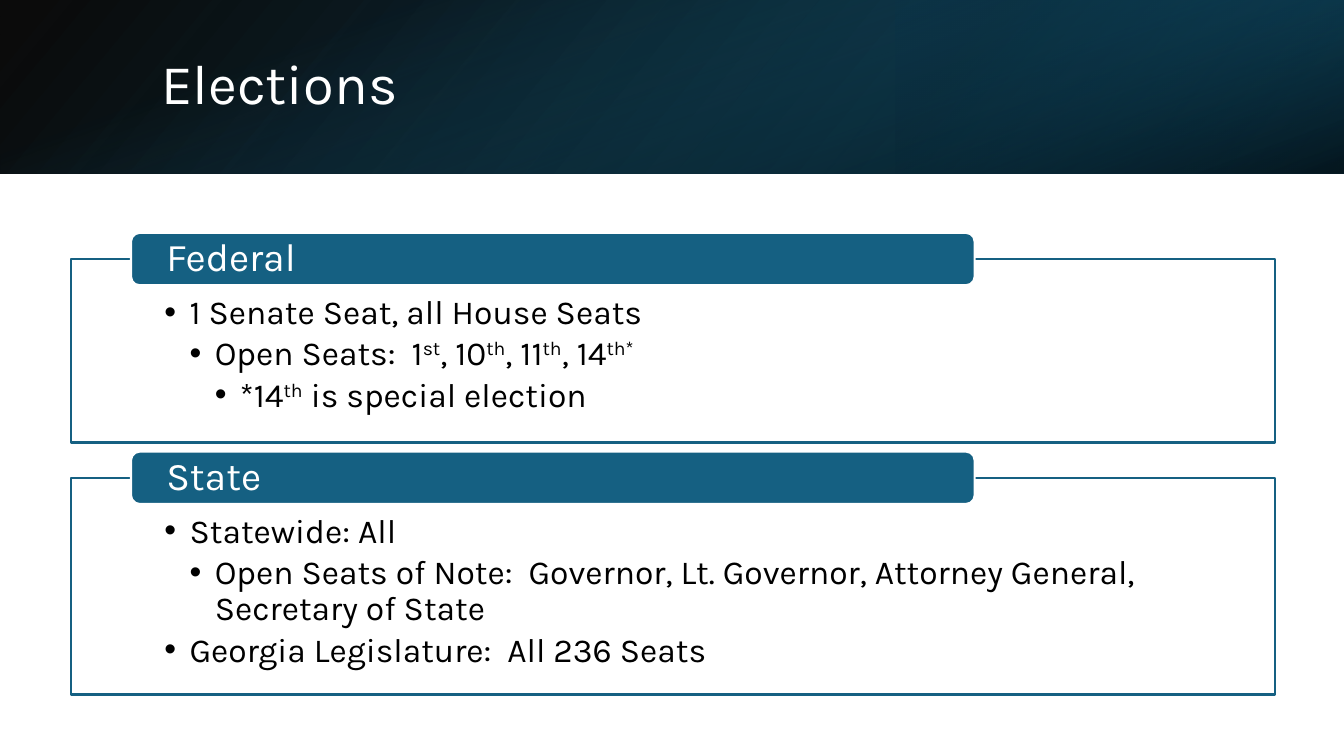
from dataclasses import dataclass

import pptx
import pptx.dml.color
import pptx.enum.shapes
import pptx.enum.text
import pptx.oxml
import pptx.oxml.ns
import pptx.util
from lxml import etree

Pt = pptx.util.Pt
MIDDLE = pptx.enum.text.MSO_ANCHOR.MIDDLE
TOP = pptx.enum.text.MSO_ANCHOR.TOP
SHAPES = pptx.enum.shapes.MSO_SHAPE

FONT = "Karla"
TEAL, WHITE, BLACK = "156082", "FFFFFF", "000000"
SLIDE_W, SLIDE_H, BAND_H = 960, 540, 123.84
BOX_X, BOX_W = 50.4, 860.4
TAB_X, TAB_W, TAB_H = 93.6, 602.64, 37.44
INDENT = 18


@dataclass
class Band:
    x: float
    y: float
    w: float
    h: float
    stops: list[tuple[int, str, int]]  # position, colour, opacity in percent
    angle: int
    rotation: int = 0
    flip: bool = False


@dataclass
class Section:
    name: str
    y: float
    h: float
    items: list[tuple[int, str]]  # level and text, with ^superscript^


BANDS = [
    Band(0, 0, SLIDE_W, BAND_H, [(0, BLACK, 96), (100, "104862", 100)], 140, flip=True),
    Band(640, 0, 320, BAND_H, [(19, "0B3041", 68), (100, TEAL, 79)], 320, 180, True),
    Band((SLIDE_W - BAND_H) / 2, (BAND_H - SLIDE_W) / 2, BAND_H, SLIDE_W,
         [(23, TEAL, 0), (99, BLACK, 74)], 340, 90),
]
SECTIONS = [
    Section("Federal", 185.04, 131.04, [
        (0, "1 Senate Seat, all House Seats"),
        (1, "Open Seats:  1^st^, 10^th^, 11^th^, 14^th*^"),
        (2, "*14^th^ is special election"),
    ]),
    Section("State", 341.28, 154.8, [
        (0, "Statewide: All"),
        (1, "Open Seats of Note:  Governor, Lt. Governor, Attorney General, "
            "Secretary of State"),
        (0, "Georgia Legislature:  All 236 Seats"),
    ]),
]


def rgb(color: str) -> pptx.dml.color.RGBColor:
    return pptx.dml.color.RGBColor.from_string(color)


def place(sp, x: float, y: float, w: float, h: float) -> None:
    sp.left, sp.top, sp.width, sp.height = Pt(x), Pt(y), Pt(w), Pt(h)


def set_style(sp, fill: str, line: str) -> None:
    sp.fill.solid()
    sp.fill.fore_color.rgb = rgb(fill)
    sp.line.color.rgb = rgb(line)
    sp.line.width = Pt(1.5)


def set_frame(tf, anchor, left: float, top: float, right: float, bottom: float) -> None:
    tf.word_wrap = True
    tf.auto_size = pptx.enum.text.MSO_AUTO_SIZE.NONE
    tf.vertical_anchor = anchor
    tf.margin_left, tf.margin_top = Pt(left), Pt(top)
    tf.margin_right, tf.margin_bottom = Pt(right), Pt(bottom)


def write(p, text: str, *, size: float, color: str, after: float = 0,
          level: int | None = None) -> None:
    """Fill a paragraph; a level makes it a bullet, ^...^ is superscript."""
    p.alignment = pptx.enum.text.PP_ALIGN.LEFT
    p.line_spacing = 0.9
    p.space_before, p.space_after = Pt(0), Pt(after)
    if level is not None:
        p.level = level
        pPr = p._p.get_or_add_pPr()
        pPr.set("marL", str(Pt(INDENT * (level + 1))))
        pPr.set("indent", str(Pt(-INDENT)))
        etree.SubElement(pPr, pptx.oxml.ns.qn("a:buChar")).set("char", "•")
    for i, part in enumerate(text.split("^")):
        if not part:
            continue
        r = p.add_run()
        r.text = part
        r.font.name, r.font.size = FONT, Pt(size)
        r.font.color.rgb = rgb(color)
        if i % 2:
            r._r.get_or_add_rPr().set("baseline", "30000")


def add_band(s, band: Band):
    sp = s.shapes.add_shape(SHAPES.RECTANGLE, 0, 0, 0, 0)
    place(sp, band.x, band.y, band.w, band.h)
    sp.rotation = band.rotation
    sp.shadow.inherit = False
    sp.line.fill.background()
    spPr = sp._element.spPr
    if band.flip:
        spPr.xfrm.set("flipH", "1")
    stops = "".join(
        f'<a:gs pos="{pos * 1000}"><a:srgbClr val="{color}">'
        f'<a:alpha val="{alpha * 1000}"/></a:srgbClr></a:gs>'
        for pos, color, alpha in band.stops)
    spPr.insert(2, pptx.oxml.parse_xml(
        f'<a:gradFill {pptx.oxml.ns.nsdecls("a")} rotWithShape="1">'
        f'<a:gsLst>{stops}</a:gsLst>'
        f'<a:lin ang="{band.angle * 60000}" scaled="0"/></a:gradFill>'))
    return sp


def add_section(s, body, section: Section) -> None:
    place(body, BOX_X, section.y, BOX_W, section.h)
    set_style(body, WHITE, TEAL)
    tf = body.text_frame
    set_frame(tf, TOP, 67, 26, 67, 13.5)
    for i, (level, text) in enumerate(section.items):
        p = tf.add_paragraph() if i else tf.paragraphs[0]
        write(p, text, size=24, color=BLACK, after=3.6, level=level)

    tab = s.shapes.add_shape(SHAPES.ROUNDED_RECTANGLE, 0, 0, 0, 0)
    place(tab, TAB_X, section.y - TAB_H / 2, TAB_W, TAB_H)
    tab.shadow.inherit = False
    set_style(tab, TEAL, WHITE)
    set_frame(tab.text_frame, MIDDLE, 23.4, 0, 23.4, 0)
    write(tab.text_frame.paragraphs[0], section.name, size=28, color=WHITE)


def main() -> None:
    prs = pptx.Presentation()
    prs.slide_width, prs.slide_height = Pt(SLIDE_W), Pt(SLIDE_H)
    s = prs.slides.add_slide(prs.slide_layouts.get_by_name("Two Content"))

    title = s.shapes.title
    place(title, 108, 27.36, 790.56, 69.12)
    set_frame(title.text_frame, MIDDLE, 7.2, 3.6, 7.2, 3.6)
    write(title.text_frame.paragraphs[0], "Elections", size=40, color=WHITE)
    for band in BANDS:
        title._element.addprevious(add_band(s, band)._element)

    for idx, section in enumerate(SECTIONS, start=1):
        body = s.placeholders[idx]
        add_section(s, body, section)

    prs.save("out.pptx")


if __name__ == "__main__":
    main()
